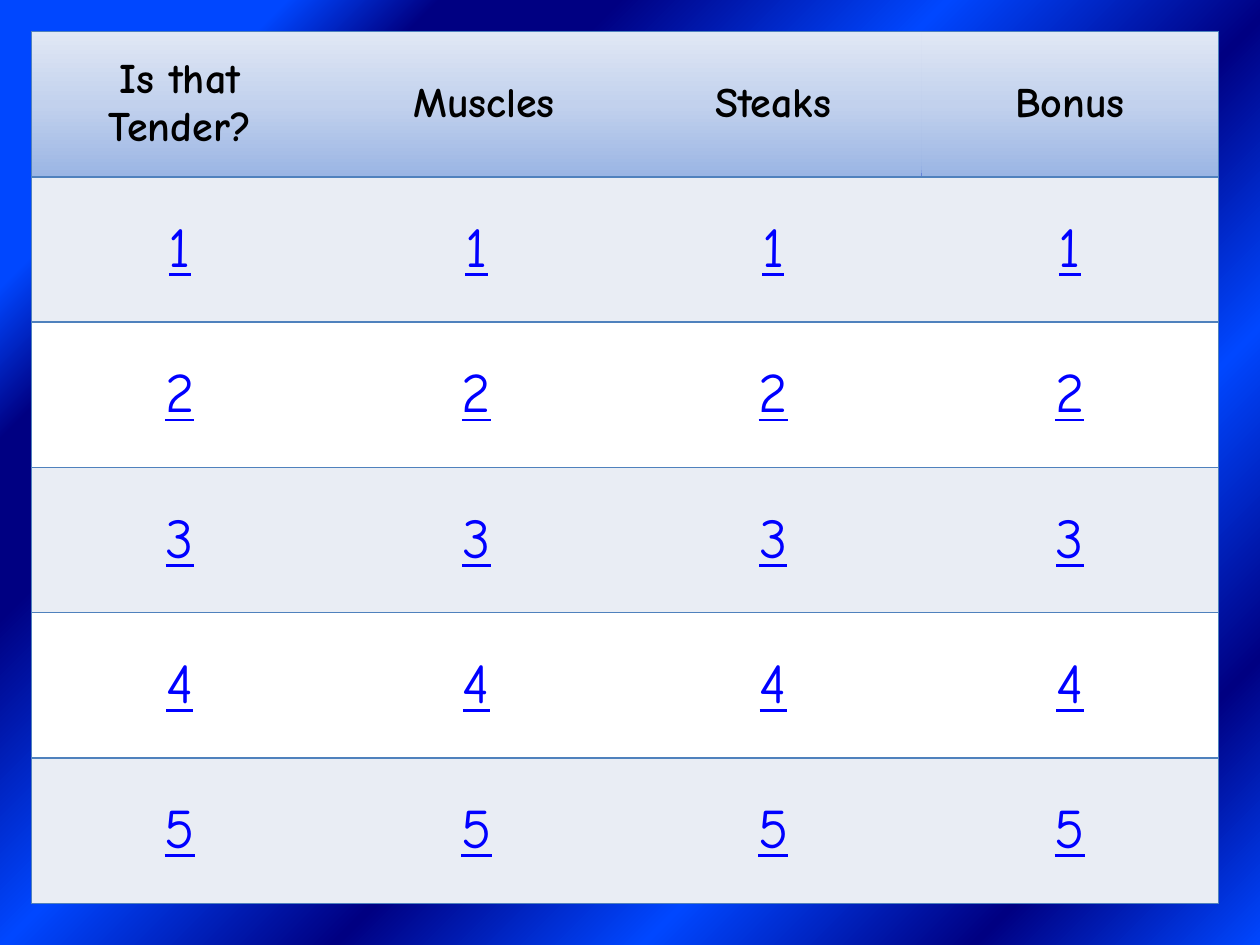
from dataclasses import dataclass

from lxml import etree
from pptx import Presentation
from pptx.dml.color import RGBColor
from pptx.enum.text import MSO_ANCHOR, PP_ALIGN
from pptx.oxml.ns import qn
from pptx.util import Pt

MIDDLE = MSO_ANCHOR.MIDDLE
CENTER = PP_ALIGN.CENTER
PX = 9144
BLANK_LAYOUT = 6


@dataclass(frozen=True)
class Theme:
    font: str = "Comic Neue"
    header_size: int = 24
    number_size: int = 32
    header_text: str = "000000"
    number_text: str = "0000FF"
    border: str = "4F81BD"
    border_width: int = 1
    bands: tuple = ("E9EDF4", "FFFFFF")
    header_stops: tuple = ((0, "9AB5E4"), (50, "C2D1ED"), (100, "E1E8F5"))
    backdrop_stops: tuple = (
        (13, "0047FF"), (20, "000082"), (28, "000082"), (43, "0047FF"),
        (58, "000082"), (72, "0047FF"), (87, "000082"), (100, "0047FF"),
    )


THEME = Theme()
TOPICS = ["Is that Tender?", " Muscles", "Steaks", "Bonus"]
LEVELS = 5


def add_color(parent, color):
    etree.SubElement(parent, qn("a:srgbClr"), val=color)


def set_gradient(fill, owner, stops, angle):
    fill.gradient()
    fill.gradient_angle = angle
    gs_list = next(owner.iter(qn("a:gsLst")))
    for gs in list(gs_list):
        gs_list.remove(gs)
    for position, color in stops:
        gs = etree.SubElement(gs_list, qn("a:gs"), pos=str(position * 1000))
        add_color(gs, color)


def set_borders(cell, visible):
    tc_pr = cell._tc.get_or_add_tcPr()
    for i, side in enumerate("LRTB"):
        ln = etree.Element(qn(f"a:ln{side}"), w=str(Pt(THEME.border_width)))
        if side in visible:
            add_color(etree.SubElement(ln, qn("a:solidFill")), THEME.border)
        else:
            etree.SubElement(ln, qn("a:noFill"))
        tc_pr.insert(i, ln)


def set_text(cell, text, size, color, bold, underline):
    cell.vertical_anchor = MIDDLE
    p = cell.text_frame.paragraphs[0]
    p.text = text
    p.alignment = CENTER
    for font in (p.font, p.runs[0].font):
        font.name = THEME.font
        font.size = Pt(size)
        font.bold = bold
        font.underline = underline
        font.color.rgb = RGBColor.from_string(color)


def fill_cell(cell, row, col):
    if row == 0:
        set_text(cell, TOPICS[col], THEME.header_size, THEME.header_text, True, False)
        set_gradient(cell.fill, cell._tc, THEME.header_stops, 90)
    else:
        set_text(cell, str(row), THEME.number_size, THEME.number_text, False, True)
        cell.fill.solid()
        band = THEME.bands[(row - 1) % len(THEME.bands)]
        cell.fill.fore_color.rgb = RGBColor.from_string(band)
    left = "L" if col == 0 else ""
    right = "R" if col == len(TOPICS) - 1 else ""
    set_borders(cell, "TB" + left + right)


def add_board(s, x, y, w, h):
    rows, cols = LEVELS + 1, len(TOPICS)
    box = [v * PX for v in (x, y, w, h)]
    table = s.shapes.add_table(rows, cols, *box).table
    table.first_row = False
    table.horz_banding = False
    for row in range(rows):
        for col in range(cols):
            fill_cell(table.cell(row, col), row, col)


def main():
    prs = Presentation()
    prs.slide_width, prs.slide_height = 1000 * PX, 750 * PX
    s = prs.slides.add_slide(prs.slide_layouts[BLANK_LAYOUT])
    set_gradient(s.background.fill, s._element, THEME.backdrop_stops, 315)
    add_board(s, 25, 25, 942, 692)
    prs.save("out.pptx")


if __name__ == "__main__":
    main()
